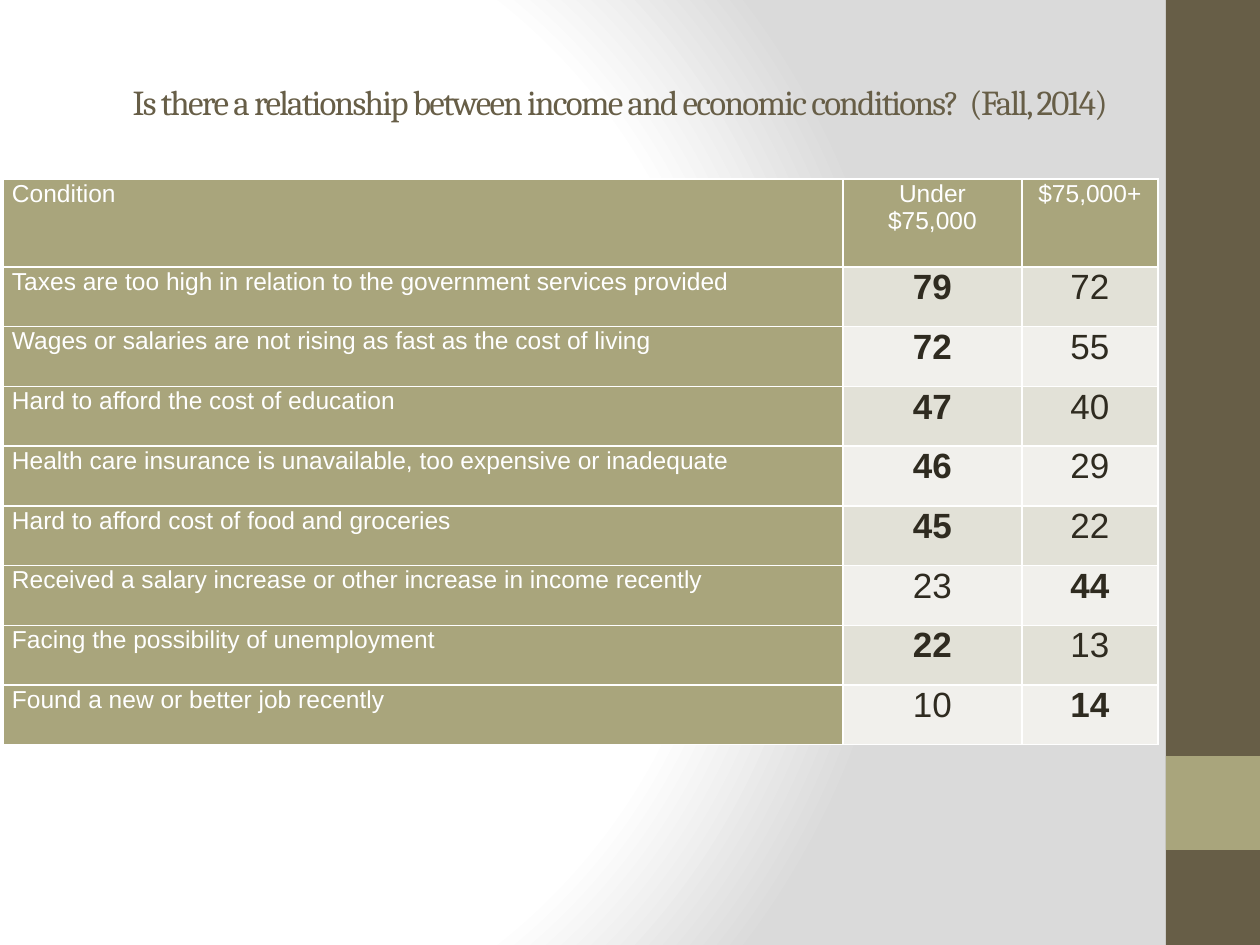
from dataclasses import dataclass

from lxml import etree
from pptx import Presentation, util as u
from pptx.dml.color import RGBColor
from pptx.enum import shapes, text
from pptx.oxml import parse_xml
from pptx.oxml.ns import nsdecls, qn


@dataclass(frozen=True)
class Theme:
    dark: str = "675E47"
    accent: str = "A9A57C"
    ink: str = "2F2B20"
    white: str = "FFFFFF"
    shade: str = "DADADA"
    bands: tuple = ("E2E1D7", "F1F0EC")
    title_font: str = "Cambria"
    body_font: str = "Arial"
    large: int = 20
    small: int = 14


THEME = Theme()
HEADINGS = ("Condition", "Under $75,000", "$75,000+")
CONDITIONS = (
    ("Taxes are too high in relation to the government services provided", 79, 72),
    ("Wages or salaries are not rising as fast as the cost of living", 72, 55),
    ("Hard to afford the cost of education", 47, 40),
    ("Health care insurance is unavailable, too expensive or inadequate", 46, 29),
    ("Hard to afford cost of food and groceries", 45, 22),
    ("Received a salary increase or other increase in income recently", 23, 44),
    ("Facing the possibility of unemployment", 22, 13),
    ("Found a new or better job recently", 10, 14),
)


def px(length):
    return u.Emu(round(length * 914400 / 126))


def set_values(target, values):
    for name, value in values.items():
        setattr(target, name, value)


def write(paragraph, wording, color, alignment, **font_values):
    paragraph.alignment = alignment
    run = paragraph.add_run()
    run.text = wording
    set_values(run.font, font_values)
    run.font.color.rgb = RGBColor.from_string(color)
    return run


def paint_background(slide):
    stops = "".join(
        f'<a:gs pos="{position * 1000}"><a:srgbClr val="{color}"/></a:gs>'
        for position, color in ((0, THEME.white), (75, THEME.white), (100, THEME.shade))
    )
    slide.background.fill.solid()
    properties = slide.background._cSld.bg.bgPr
    properties.replace(properties[0], parse_xml(
        f'<a:gradFill {nsdecls("a")} rotWithShape="1"><a:gsLst>{stops}</a:gsLst>'
        '<a:path path="circle"><a:fillToRect l="20000" t="50000" r="100000" b="50000"/>'
        '</a:path></a:gradFill>'))


def add_sidebar(slide, left, top, width, height):
    square_top = top + height * 4 // 5
    for block_top, block_height, color in (
        (top, height, THEME.dark), (square_top, width, THEME.accent),
    ):
        block = slide.shapes.add_shape(
            shapes.MSO_SHAPE.RECTANGLE, px(left), px(block_top), px(width), px(block_height))
        block.shadow.inherit = False
        block.fill.solid()
        block.fill.fore_color.rgb = RGBColor.from_string(color)
        block.line.fill.background()


def add_title(slide, left, top, width, height):
    box = slide.shapes.add_textbox(px(left), px(top), px(width), px(height))
    set_values(box.text_frame, {
        "word_wrap": True, "vertical_anchor": text.MSO_ANCHOR.MIDDLE})
    run = write(
        box.text_frame.paragraphs[0],
        "Is there a relationship between income and economic conditions?  (Fall, 2014)",
        THEME.dark, text.PP_ALIGN.CENTER,
        name=THEME.title_font, size=u.Pt(THEME.large))
    run.font._element.set("spc", "-100")


def add_borders(cell):
    properties = cell._tc.get_or_add_tcPr()
    for side in ("lnL", "lnR", "lnT", "lnB"):
        line = etree.SubElement(properties, qn(f"a:{side}"), w=str(u.Pt(1)))
        fill = etree.SubElement(line, qn("a:solidFill"))
        etree.SubElement(fill, qn("a:srgbClr"), val=THEME.white)


def format_cell(cell, wording, fill, color, alignment, size, bold):
    set_values(cell, {
        "margin_left": px(9), "margin_right": px(9),
        "margin_top": px(1), "margin_bottom": 0})
    add_borders(cell)
    cell.fill.solid()
    cell.fill.fore_color.rgb = RGBColor.from_string(fill)
    write(cell.text_frame.paragraphs[0], wording, color, alignment,
          name=THEME.body_font, size=u.Pt(size), bold=bold)


def add_conditions_table(slide, left, top, width, height):
    header_height = 88
    row_height = (height - header_height) / len(CONDITIONS)
    value_widths = (179, 136)
    column_widths = (width - sum(value_widths), *value_widths)
    rows = (HEADINGS, *CONDITIONS)
    table = slide.shapes.add_table(
        len(rows), len(HEADINGS), px(left), px(top), px(width), px(height)).table
    for column, column_width in zip(table.columns, column_widths):
        column.width = px(column_width)
    for row_index, values in enumerate(rows):
        table.rows[row_index].height = px(row_height if row_index else header_height)
        for column_index, value in enumerate(values):
            is_value = row_index > 0 and column_index > 0
            format_cell(
                table.cell(row_index, column_index), str(value),
                fill=THEME.bands[(row_index - 1) % 2] if is_value else THEME.accent,
                color=THEME.ink if is_value else THEME.white,
                alignment=text.PP_ALIGN.CENTER if column_index else text.PP_ALIGN.LEFT,
                size=THEME.large if is_value else THEME.small,
                bold=is_value and value == max(values[1:]))


def main():
    presentation = Presentation()
    set_values(presentation, {"slide_width": px(1260), "slide_height": px(945)})
    slide = presentation.slides.add_slide(presentation.slide_layouts[6])
    paint_background(slide)
    add_sidebar(slide, 1166, 0, 94, 945)
    add_title(slide, 53, 73, 1134, 57)
    add_conditions_table(slide, 3, 179, 1155, 566)
    presentation.save("out.pptx")


if __name__ == "__main__":
    main()
